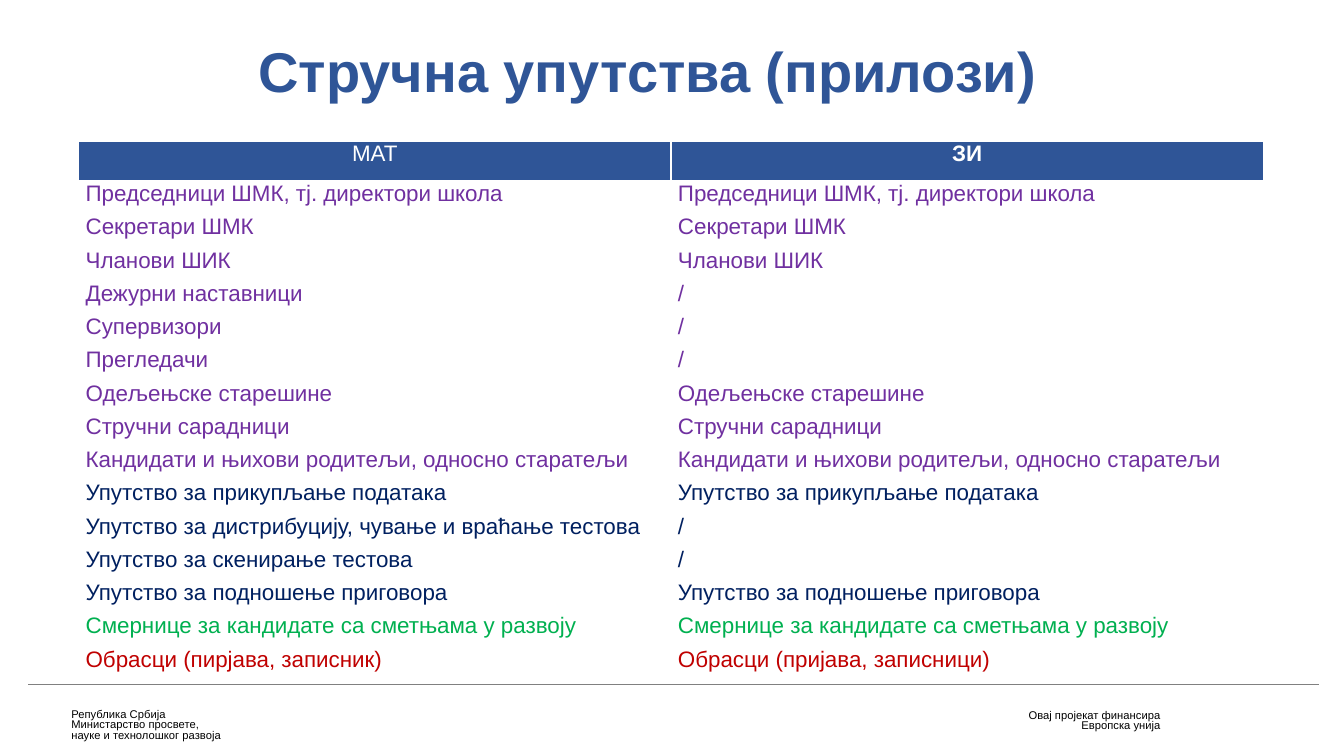
from lxml.etree import SubElement
from pptx import Presentation
from pptx.dml.color import RGBColor
from pptx.enum.shapes import MSO_CONNECTOR
from pptx.enum.text import MSO_ANCHOR, PP_ALIGN as Align
from pptx.oxml.ns import qn
from pptx.util import Inches, Pt

FONT = "Arial"
BLUE, PURPLE, NAVY = "2F5597", "7030A0", "002060"
GREEN, RED = "00B050", "C00000"
WHITE, BLACK, GREY = "FFFFFF", "000000", "808080"
HEADER_HEIGHT = 0.4

# Instructions for the mathematics test, for the final exam, and text colour
INSTRUCTIONS = [
    ("Председници ШМК, тј. директори школа", "Председници ШМК, тј. директори школа", PURPLE),
    ("Секретари ШМК", "Секретари ШМК", PURPLE),
    ("Чланови ШИК", "Чланови ШИК", PURPLE),
    ("Дежурни наставници", "/", PURPLE),
    ("Супервизори", "/", PURPLE),
    ("Прегледачи", "/", PURPLE),
    ("Одељењске старешине", "Одељењске старешине", PURPLE),
    ("Стручни сарадници", "Стручни сарадници", PURPLE),
    ("Кандидати и њихови родитељи, односно старатељи",
     "Кандидати и њихови родитељи, односно старатељи", PURPLE),
    ("Упутство за прикупљање података", "Упутство за прикупљање података", NAVY),
    ("Упутство за дистрибуцију, чување и враћање тестова", "/", NAVY),
    ("Упутство за скенирање тестова", "/", NAVY),
    ("Упутство за подношење приговора", "Упутство за подношење приговора", NAVY),
    ("Смернице за кандидате са сметњама у развоју",
     "Смернице за кандидате са сметњама у развоју", GREEN),
    ("Обрасци (пирјава, записник)", "Обрасци (пријава, записници)", RED),
]


def color(hex_code):
    return RGBColor.from_string(hex_code)


def add_text(paragraph, text, size, hex_code, bold=False, align=Align.LEFT):
    paragraph.alignment = align
    run = paragraph.add_run()
    run.text = text
    run.font.name = FONT
    run.font.size = Pt(size)
    run.font.bold = bold
    run.font.color.rgb = color(hex_code)


def set_borders(cell, widths):
    """Give the cell white borders; widths maps an edge tag to points."""
    properties = cell._tc.get_or_add_tcPr()
    for edge, width in widths.items():
        line = SubElement(properties, qn(f"a:{edge}"), w=str(Pt(width)))
        fill = SubElement(line, qn("a:solidFill"))
        SubElement(fill, qn("a:srgbClr"), val=WHITE)


def fill_cell(cell, text, text_color, fill_color, widths, bold=False, align=Align.LEFT):
    set_borders(cell, widths)
    cell.fill.solid()
    cell.fill.fore_color.rgb = color(fill_color)
    cell.margin_left = cell.margin_right = Inches(0.07)
    cell.margin_top = cell.margin_bottom = 0
    paragraph = cell.text_frame.paragraphs[0]
    paragraph.space_after = Pt(1)
    add_text(paragraph, text, 16, text_color, bold, align)


def add_title(slide, left, top, width, height):
    box = slide.shapes.add_textbox(*map(Inches, (left, top, width, height)))
    frame = box.text_frame
    frame.word_wrap = True
    frame.vertical_anchor = MSO_ANCHOR.MIDDLE
    frame.paragraphs[0].line_spacing = 0.9
    add_text(frame.paragraphs[0], "Стручна упутства (прилози)", 40, BLUE, True, Align.CENTER)


def add_instruction_table(slide, left, top, width, height):
    table = slide.shapes.add_table(
        len(INSTRUCTIONS) + 1, 2, *map(Inches, (left, top, width, height))).table
    table.horz_banding = False
    row_height = (height - HEADER_HEIGHT) / len(INSTRUCTIONS)
    for index, row in enumerate(table.rows):
        row.height = Inches(row_height if index else HEADER_HEIGHT)

    header_widths = {"lnL": 1, "lnR": 1, "lnT": 1, "lnB": 3}
    for column, (heading, bold) in enumerate([("МАТ", False), ("ЗИ", True)]):
        fill_cell(table.cell(0, column), heading, WHITE, BLUE, header_widths, bold, Align.CENTER)

    body_widths = {"lnL": 1, "lnR": 1, "lnB": 1}
    for row, (*texts, text_color) in enumerate(INSTRUCTIONS, start=1):
        for column, text in enumerate(texts):
            fill_cell(table.cell(row, column), text, text_color, WHITE, body_widths)


def add_footer_text(slide, lines, align, left, top, width, height):
    box = slide.shapes.add_textbox(*map(Inches, (left, top, width, height)))
    frame = box.text_frame
    frame.word_wrap = False
    for index, line in enumerate(lines):
        paragraph = frame.add_paragraph() if index else frame.paragraphs[0]
        paragraph.line_spacing = 0.8
        add_text(paragraph, line, 8, BLACK, align=align)


def add_footer(slide, left, top, width):
    rule = slide.shapes.add_connector(
        MSO_CONNECTOR.STRAIGHT, *map(Inches, (left, top, left + width, top)))
    rule.line.color.rgb = color(GREY)
    rule.line.width = Pt(1)
    SubElement(rule._element.spPr, qn("a:effectLst"))
    add_footer_text(
        slide, ["Република Србија", "Министарство просвете,", "науке и технолошког развоја"],
        Align.LEFT, left + 0.33, top + 0.2, 1.7, 0.42)
    add_footer_text(
        slide, ["Овај пројекат финансира", "Европска унија"],
        Align.RIGHT, left + 9.8, top + 0.21, 1.53, 0.32)


def main():
    presentation = Presentation()
    presentation.slide_width = Inches(13.33)
    presentation.slide_height = Inches(7.5)
    slide = presentation.slides.add_slide(presentation.slide_layouts[6])
    add_footer(slide, 0.28, 6.79, 12.8)
    add_title(slide, 0.67, 0.01, 11.5, 1.45)
    add_instruction_table(slide, 0.78, 1.4, 11.75, 5.35)
    presentation.save("out.pptx")


if __name__ == "__main__":
    main()
